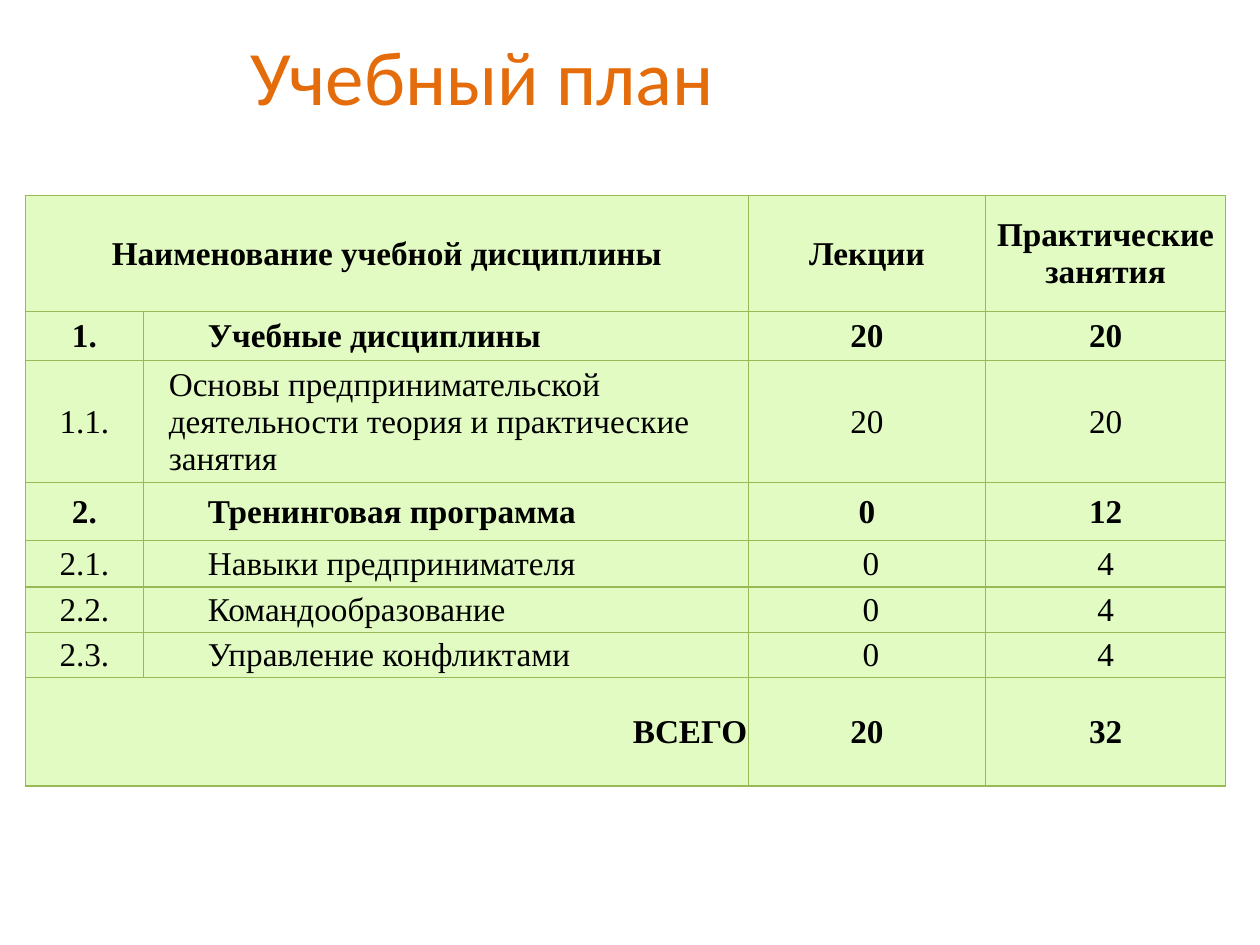
from lxml.etree import SubElement
from pptx import Presentation
from pptx.dml.color import RGBColor
from pptx.enum.text import MSO_ANCHOR as Anchor, PP_ALIGN as Align
from pptx.oxml.ns import qn
from pptx.util import Inches, Pt

COLUMN_WIDTHS = [0.94, 4.8, 1.88, 1.91]
ROW_HEIGHTS = [0.92, 0.39, 0.97, 0.46, 0.37, 0.36, 0.36, 0.86]
ROWS = [
    ["Наименование учебной дисциплины", "", "Лекции", "Практические занятия"],
    ["1.", "Учебные дисциплины", "20", "20"],
    ["1.1.", "Основы предпринимательской деятельности теория и практические занятия", "20", "20"],
    ["2.", "Тренинговая программа", "0", "12"],
    ["2.1.", "Навыки предпринимателя", " 0", "4"],
    ["2.2.", "Командообразование", " 0", "4"],
    ["2.3.", "Управление конфликтами", " 0", "4"],
    ["ВСЕГО", "", "20", "32"],
]
BOLD_ROWS = {0, 1, 3, 7}
MERGED_ROWS = {0, 7}
LONG_ROW = 2
TOTAL_ROW = 7


def color(value):
    """Turn a hex string into a colour."""
    return RGBColor.from_string(value)


def set_font(para, name, size, value, bold=False):
    """Set the font of a whole paragraph."""
    font = para.font
    font.name, font.size, font.bold = name, Pt(size), bold
    font.color.rgb = color(value)


def add_title(page, text):
    """Place and format the title placeholder."""
    title = page.shapes.title
    title.left, title.top = Inches(0.67), Inches(-0.03)
    title.width, title.height = Inches(6.32), Inches(1.25)
    frame = title.text_frame
    frame.text = text
    frame.vertical_anchor = Anchor.MIDDLE
    para = frame.paragraphs[0]
    para.alignment = Align.CENTER
    set_font(para, "Calibri", 44, "E46C0A")


def set_borders(cell, value, width):
    """Draw a solid line on all four sides of a cell."""
    properties = cell._tc.get_or_add_tcPr()
    for side in ("lnL", "lnR", "lnT", "lnB"):
        line = SubElement(properties, qn(f"a:{side}"), w=str(Pt(width)))
        fill = SubElement(line, qn("a:solidFill"))
        SubElement(fill, qn("a:srgbClr"), val=value)


def set_indent(para, left, first):
    """Set the left margin and first-line indent of a paragraph."""
    properties = para._p.get_or_add_pPr()
    properties.set("marL", str(Inches(left)))
    properties.set("indent", str(Inches(first)))


def format_cell(cell):
    """Give a cell its borders, fill, margins and anchor."""
    set_borders(cell, "98B955", 0.75)
    cell.fill.solid()
    cell.fill.fore_color.rgb = color("E2FBC2")
    cell.margin_left = cell.margin_right = cell.margin_top = Inches(0.01)
    cell.margin_bottom = 0
    cell.vertical_anchor = Anchor.MIDDLE


def write_cell(cell, text, row, column):
    """Write a cell's text with the layout of its row and column."""
    cell.text = text
    para = cell.text_frame.paragraphs[0]
    if column == 1:
        para.alignment = Align.LEFT
        set_indent(para, *((0.19, 0) if row == LONG_ROW else (0, 0.5)))
    elif (row, column) == (TOTAL_ROW, 0):
        para.alignment = Align.RIGHT
    else:
        para.alignment = Align.CENTER
    set_font(para, "Times New Roman", 19, "000000", row in BOLD_ROWS)


def add_plan(page):
    """Add the curriculum table."""
    table = page.shapes.add_table(
        len(ROWS), len(COLUMN_WIDTHS), Inches(0.2), Inches(1.55),
        Inches(sum(COLUMN_WIDTHS)), Inches(sum(ROW_HEIGHTS))).table
    for column, width in zip(table.columns, COLUMN_WIDTHS):
        column.width = Inches(width)
    for row, height in zip(table.rows, ROW_HEIGHTS):
        row.height = Inches(height)
    for row in MERGED_ROWS:
        table.cell(row, 0).merge(table.cell(row, 1))
    for row, texts in enumerate(ROWS):
        for column, text in enumerate(texts):
            cell = table.cell(row, column)
            format_cell(cell)
            if not cell.is_spanned:
                write_cell(cell, text, row, column)


def main():
    """Build and save the deck."""
    deck = Presentation()
    deck.slide_width, deck.slide_height = Inches(10), Inches(7.5)
    page = deck.slides.add_slide(deck.slide_layouts[5])
    add_title(page, "Учебный план")
    add_plan(page)
    deck.save("out.pptx")


if __name__ == "__main__":
    main()
